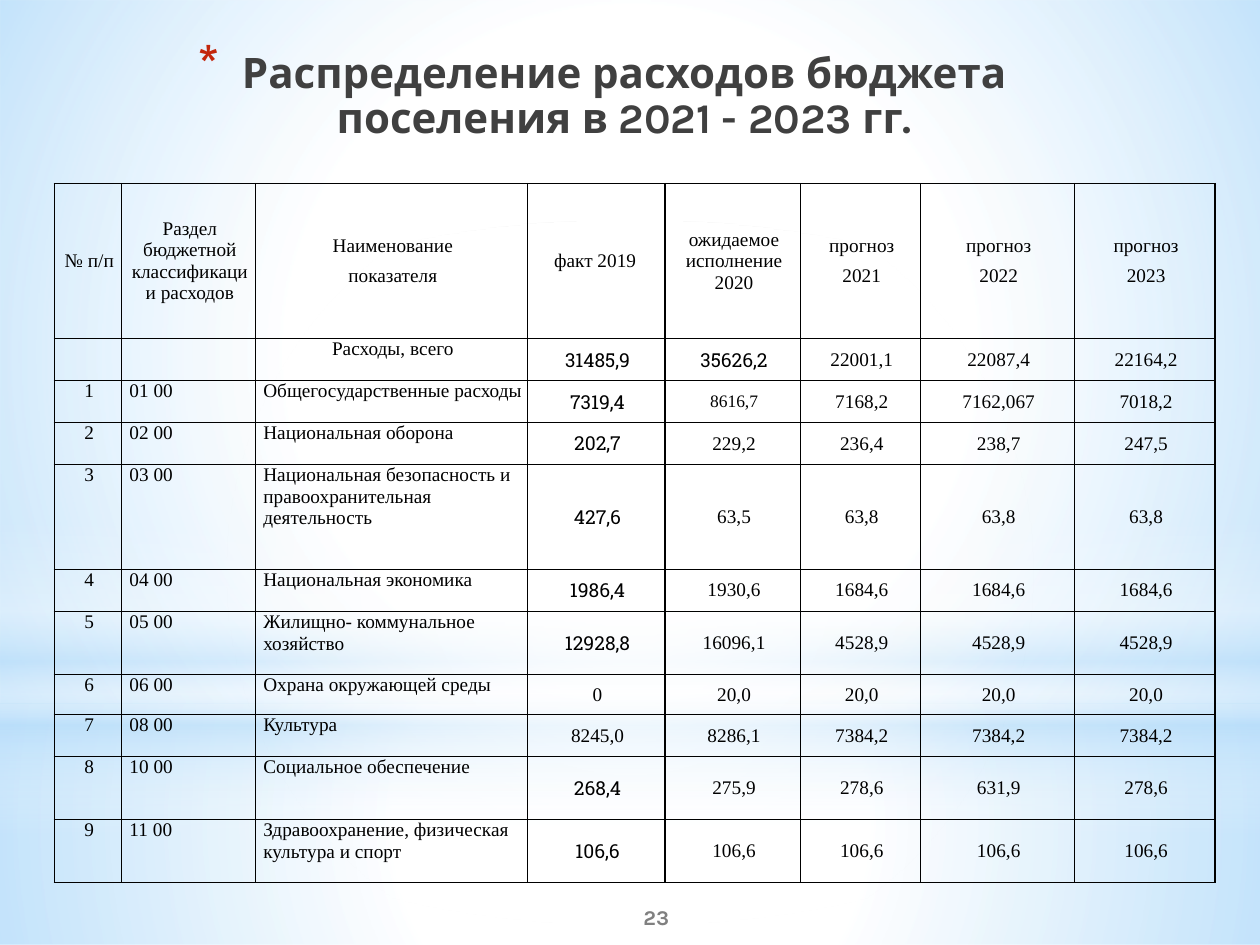
"""Builds the slide on the distribution of settlement budget expenditure."""
from dataclasses import dataclass

from lxml import etree
from pptx import Presentation
from pptx.dml.color import RGBColor
from pptx.enum.shapes import MSO_SHAPE
from pptx.enum.text import MSO_ANCHOR, PP_ALIGN
from pptx.oxml.ns import qn
from pptx.util import Pt

RECT, OVAL = MSO_SHAPE.RECTANGLE, MSO_SHAPE.OVAL
TOP, MIDDLE = MSO_ANCHOR.TOP, MSO_ANCHOR.MIDDLE
LEFT, CENTER = PP_ALIGN.LEFT, PP_ALIGN.CENTER


@dataclass(frozen=True)
class Theme:
    white: str = "FFFFFF"
    sky: str = "B4DCFA"
    title: str = "404040"
    bullet: str = "C3260C"
    number: str = "808080"
    black: str = "000000"
    heading_font: str = "Karla"
    body_font: str = "Times New Roman"
    accent_font: str = "Roboto Slab"
    title_size: float = 24
    number_size: float = 12
    body_size: float = 11
    small_size: float = 10


T = Theme()

COL_WIDTHS = [38.5, 76.5, 155.5, 78.5, 77.5, 68.5, 88, 80.5]
ROW_HEIGHTS = [88.5, 24, 24, 24, 60, 24, 36, 23, 24, 36, 36]
HEADER = ["№ п/п", "Раздел\nбюджетной классификации расходов",
          "Наименование\nпоказателя", "факт 2019 ",
          "ожидаемое исполнение 2020",
          "прогноз\n2021", "прогноз\n2022", "прогноз\n2023"]
ROWS = [
    ["", "", "Расходы, всего",
     "31485,9", "35626,2", "22001,1", "22087,4", "22164,2"],
    ["1", "01 00", "Общегосударственные расходы",
     "7319,4", "8616,7", "7168,2", "7162,067", "7018,2"],
    ["2", "02 00", "Национальная оборона",
     "202,7", "229,2", "236,4", "238,7", "247,5"],
    ["3", "03 00", "Национальная безопасность и правоохранительная деятельность",
     "427,6", "63,5", "63,8", "63,8", "63,8"],
    ["4", "04 00", "Национальная экономика",
     "1986,4", "1930,6", "1684,6", "1684,6", "1684,6"],
    ["5", "05 00", "Жилищно- коммунальное хозяйство",
     "12928,8", "16096,1", "4528,9", "4528,9", "4528,9"],
    ["6", "06 00", "Охрана окружающей среды",
     "0", "20,0", "20,0", "20,0", "20,0"],
    ["7", "08 00", "Культура",
     "8245,0", "8286,1", "7384,2", "7384,2", "7384,2"],
    ["8", "10 00", "Социальное обеспечение",
     "268,4", "275,9", "278,6", "631,9", "278,6"],
    ["9", "11 00", "Здравоохранение, физическая культура и спорт",
     "106,6", "106,6", "106,6", "106,6", "106,6"],
]
ACCENT_CELLS = {(r, 3) for r in (1, 2, 3, 4, 5, 6, 9, 10)} | {(1, 4)}
SMALL_CELLS = {(2, 4)}


def sub(parent, tag, **attrs):
    return etree.SubElement(parent, qn(tag), attrs)


def set_font(p, name, size, color, bold=False):
    p.font.name = name
    p.font.size = Pt(size)
    p.font.bold = bold
    p.font.color.rgb = RGBColor.from_string(color)


def add_glow(s, kind, box, stops, angle=None):
    """Add a borderless shape with a translucent radial or linear gradient."""
    sp = s.shapes.add_shape(kind, *map(Pt, box))
    sp.shadow.inherit = False
    sp.line.fill.background()
    sp.fill.gradient()
    grad = sp.element.spPr.find(qn("a:gradFill"))
    for child in list(grad):
        grad.remove(child)
    gs_lst = sub(grad, "a:gsLst")
    for pos, color, alpha in stops:
        gs = sub(gs_lst, "a:gs", pos=str(pos * 1000))
        clr = sub(gs, "a:srgbClr", val=color)
        sub(clr, "a:alpha", val=str(alpha * 1000))
    if angle is None:
        route = sub(grad, "a:path", **{"path": "circle"})
        sub(route, "a:fillToRect", **dict.fromkeys("ltrb", "50000"))
    else:
        sub(grad, "a:lin", ang=str(angle * 60000), scaled="0")


def add_text(s, box, text, size, color, anchor=TOP):
    sp = s.shapes.add_textbox(*map(Pt, box))
    tf = sp.text_frame
    tf.word_wrap = True
    tf.vertical_anchor = anchor
    p = tf.paragraphs[0]
    p.text = text
    p.alignment = CENTER
    return p


def add_title(s, text):
    p = add_text(s, (88, 26, 512.5, 90), text, T.title_size, T.title)
    p.line_spacing = 0.9
    ppr = p._p.get_or_add_pPr()
    ppr.set("marL", str(Pt(25)))
    ppr.set("indent", str(Pt(-25)))
    sub(sub(ppr, "a:buClr"), "a:srgbClr", val=T.bullet)
    sub(ppr, "a:buSzPct", val="128000")
    sub(ppr, "a:buChar", char="*")
    set_font(p, T.heading_font, T.title_size, T.title, bold=True)


def add_page_number(s, text):
    p = add_text(s, (303, 508.5, 144, 31.5), text, T.number_size, T.number, MIDDLE)
    set_font(p, T.heading_font, T.number_size, T.number, bold=True)


def set_borders(cell):
    tcpr = cell._tc.get_or_add_tcPr()
    for side in ("a:lnL", "a:lnR", "a:lnT", "a:lnB"):
        ln = sub(tcpr, side, w=str(Pt(1)))
        sub(sub(ln, "a:solidFill"), "a:srgbClr", val=T.black)


def fill_cell(cell, text, row, col):
    set_borders(cell)
    cell.fill.background()
    cell.margin_left = cell.margin_right = Pt(3)
    cell.margin_top = cell.margin_bottom = 0
    cell.vertical_anchor = MIDDLE if row == 0 or col > 2 else TOP
    cell.text = text
    font = T.accent_font if (row, col) in ACCENT_CELLS else T.body_font
    size = T.small_size if (row, col) in SMALL_CELLS else T.body_size
    for i, p in enumerate(cell.text_frame.paragraphs):
        p.alignment = LEFT if row > 1 and col in (1, 2) else CENTER
        p._p.get_or_add_pPr().set("marL", str(Pt(1.5)))
        if i and col != 1:
            p.space_before = Pt(5)
        set_font(p, font, size, T.black)


def add_budget_table(s):
    size = sum(COL_WIDTHS), sum(ROW_HEIGHTS)
    frame = s.shapes.add_table(len(ROW_HEIGHTS), len(COL_WIDTHS),
                               Pt(31), Pt(105), *map(Pt, size))
    table = frame.table
    table.first_row = table.horz_banding = False
    for column, width in zip(table.columns, COL_WIDTHS):
        column.width = Pt(width)
    for row, height in zip(table.rows, ROW_HEIGHTS):
        row.height = Pt(height)
    for r, values in enumerate([HEADER] + ROWS):
        for c, text in enumerate(values):
            fill_cell(table.cell(r, c), text, r, c)


def add_backdrop(s):
    w, b = T.white, T.sky
    add_glow(s, RECT, (0, 402, 720, 138), [(0, w, 91), (37, w, 76), (100, b, 79)])
    add_glow(s, RECT, (0, 0, 720, 402), [(0, w, 89), (48, w, 62), (100, b, 79)])
    add_glow(s, RECT, (0, 297, 720, 180),
             [(0, w, 0), (29, w, 30), (45, b, 40), (55, w, 26), (65, b, 60),
              (100, w, 0)], angle=90)
    add_glow(s, OVAL, (0, 126, 720, 402), [(0, w, 100), (56, w, 0)])


def main():
    prs = Presentation()
    prs.slide_width, prs.slide_height = Pt(720), Pt(540)
    s = prs.slides.add_slide(prs.slide_layouts[6])
    add_backdrop(s)
    add_title(s, "Распределение расходов бюджета поселения в 2021 - 2023 гг.")
    add_page_number(s, "23")
    add_budget_table(s)
    prs.save("out.pptx")


if __name__ == "__main__":
    main()
